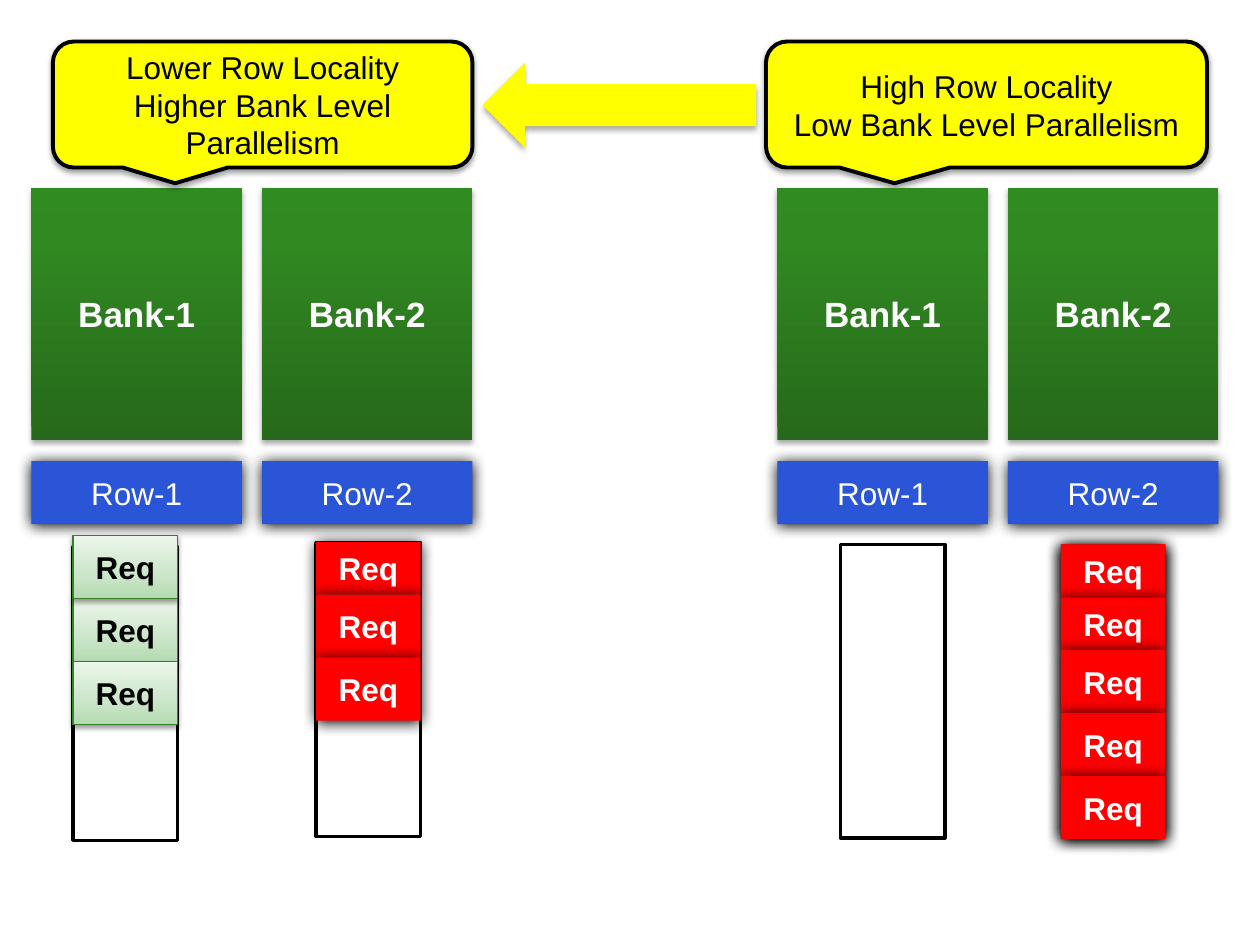
from dataclasses import dataclass

from lxml.etree import SubElement
from pptx import Presentation
from pptx.dml.color import RGBColor
from pptx.enum.shapes import MSO_SHAPE
from pptx.enum.text import MSO_ANCHOR, PP_ALIGN
from pptx.oxml.ns import qn
from pptx.util import Inches, Pt


@dataclass(frozen=True)
class Style:
    """Fill, outline, shadow and text of one kind of element."""

    fill: object
    line: tuple = None
    shadow: tuple = None
    color: str = "000000"
    size: int = 18
    bold: bool = False


@dataclass(frozen=True)
class Theme:
    """Colours, type sizes and shadows of the slide."""

    font: str = "Arial"
    soft: tuple = (38, 3.1, 1.6)
    strong: tuple = (100, 8.5, 1)
    callout: Style = Style("FFFF00", ("000000", 2.25), soft)
    arrow: Style = Style("FFFF00", shadow=(32, 3.5, 2.2))
    bank: Style = Style(((0, "26691A"), (80, "318922"), (100, "308C20")),
                        shadow=(35, 3.1, 1.8), color="FFFFFF", size=20, bold=True)
    row: Style = Style("2A55D6", shadow=strong, color="FFFFFF")
    queue: Style = Style("FFFFFF", ("000000", 2))
    red: Style = Style("FF0000", shadow=strong, color="FFFFFF", bold=True)
    green: Style = Style(((0, "B3DBB0"), (35, "CAE5C8"), (100, "EBF6EA")),
                         ("38802C", 0.75), soft, bold=True)


class BankDiagram:
    """Draws banks, row buffers and request queues on a slide."""

    def __init__(self, slide, theme):
        self.slide = slide
        self.theme = theme

    def shape(self, preset, box, style, *lines):
        """Add a styled preset shape with centred text."""
        shape = self.slide.shapes.add_shape(preset, *(Inches(length) for length in box))
        self.paint(shape, style)
        self.shade(shape, style.shadow)
        frame = shape.text_frame
        frame.word_wrap = True
        frame.vertical_anchor = MSO_ANCHOR.MIDDLE
        for index, line in enumerate(lines):
            paragraph = frame.add_paragraph() if index else frame.paragraphs[0]
            paragraph.text = line
            paragraph.alignment = PP_ALIGN.CENTER
            paragraph.font.name = self.theme.font
            paragraph.font.size = Pt(style.size)
            paragraph.font.bold = style.bold
            paragraph.font.color.rgb = RGBColor.from_string(style.color)
        return shape

    def paint(self, shape, style):
        """Set a solid or gradient fill and the outline."""
        if isinstance(style.fill, str):
            shape.fill.solid()
            shape.fill.fore_color.rgb = RGBColor.from_string(style.fill)
        else:
            shape.fill.gradient()
            shape.fill.gradient_angle = 90
            stops = shape._element.spPr.find(".//" + qn("a:gsLst"))
            for stop in list(stops):
                stops.remove(stop)
            for position, color in style.fill:
                stop = SubElement(stops, qn("a:gs"), pos=str(position * 1000))
                SubElement(stop, qn("a:srgbClr"), val=color)
        if style.line:
            color, width = style.line
            shape.line.color.rgb = RGBColor.from_string(color)
            shape.line.width = Pt(width)
        else:
            shape.line.fill.background()

    def shade(self, shape, shadow):
        """Replace the inherited shadow with a downward one, or none."""
        shape.shadow.inherit = False
        if shadow:
            opacity, blur, distance = shadow
            effects = shape._element.spPr.find(qn("a:effectLst"))
            outer = SubElement(effects, qn("a:outerShdw"), blurRad=str(Pt(blur)),
                               dist=str(Pt(distance)), dir="5400000", rotWithShape="0")
            color = SubElement(outer, qn("a:srgbClr"), val="000000")
            SubElement(color, qn("a:alpha"), val=str(opacity * 1000))

    def callout(self, left, width, *lines):
        """Add a yellow callout above a pair of banks."""
        self.shape(MSO_SHAPE.ROUNDED_RECTANGULAR_CALLOUT, (left, 0.33, width, 1),
                   self.theme.callout, *lines)

    def arrow(self):
        """Add the block arrow from the right state to the left one."""
        arrow = self.shape(MSO_SHAPE.DOWN_ARROW, (4.58, -0.25, 0.67, 2.17), self.theme.arrow)
        arrow.rotation = 90

    def banks(self, left):
        """Add two banks with their row buffers."""
        for number in (1, 2):
            x = left + (number - 1) * 1.83
            self.shape(MSO_SHAPE.RECTANGLE, (x, 1.49, 1.67, 2), self.theme.bank, f"Bank-{number}")
            self.shape(MSO_SHAPE.RECTANGLE, (x, 3.66, 1.67, 0.5), self.theme.row, f"Row-{number}")

    def queue(self, left, top, style):
        """Add a request queue outline."""
        self.shape(MSO_SHAPE.RECTANGLE, (left, top, 0.83, 2.33), style)

    def requests(self, left, style, slots):
        """Add requests at the given tops and heights."""
        for top, height in slots:
            self.shape(MSO_SHAPE.RECTANGLE, (left, top, 0.83, height), style, "Req")


def main():
    """Build and save the slide."""
    presentation = Presentation()
    presentation.slide_width = Inches(10)
    presentation.slide_height = Inches(7.5)
    theme = Theme()
    diagram = BankDiagram(presentation.slides.add_slide(presentation.slide_layouts[6]), theme)

    diagram.callout(6.08, 3.5, "High Row Locality", "Low Bank Level Parallelism")
    diagram.banks(0.25)
    diagram.arrow()
    diagram.banks(6.17)

    diagram.queue(8.42, 4.32, theme.red)
    diagram.requests(8.42, theme.red, [(4.32, 0.42), (4.74, 0.42), (5.16, 0.5),
                                       (5.66, 0.5), (6.16, 0.5)])
    diagram.queue(6.67, 4.32, theme.queue)
    diagram.queue(2.51, 4.31, theme.queue)
    diagram.requests(2.51, theme.red, [(4.3, 0.42), (4.72, 0.5), (5.22, 0.5)])
    diagram.queue(0.58, 4.34, theme.queue)
    diagram.requests(0.58, theme.green, [(4.75, 0.5), (5.25, 0.5)])
    diagram.callout(0.42, 3.33, "Lower Row Locality", "Higher Bank Level Parallelism")
    diagram.requests(0.58, theme.green, [(4.25, 0.5)])

    presentation.save("out.pptx")


if __name__ == "__main__":
    main()
